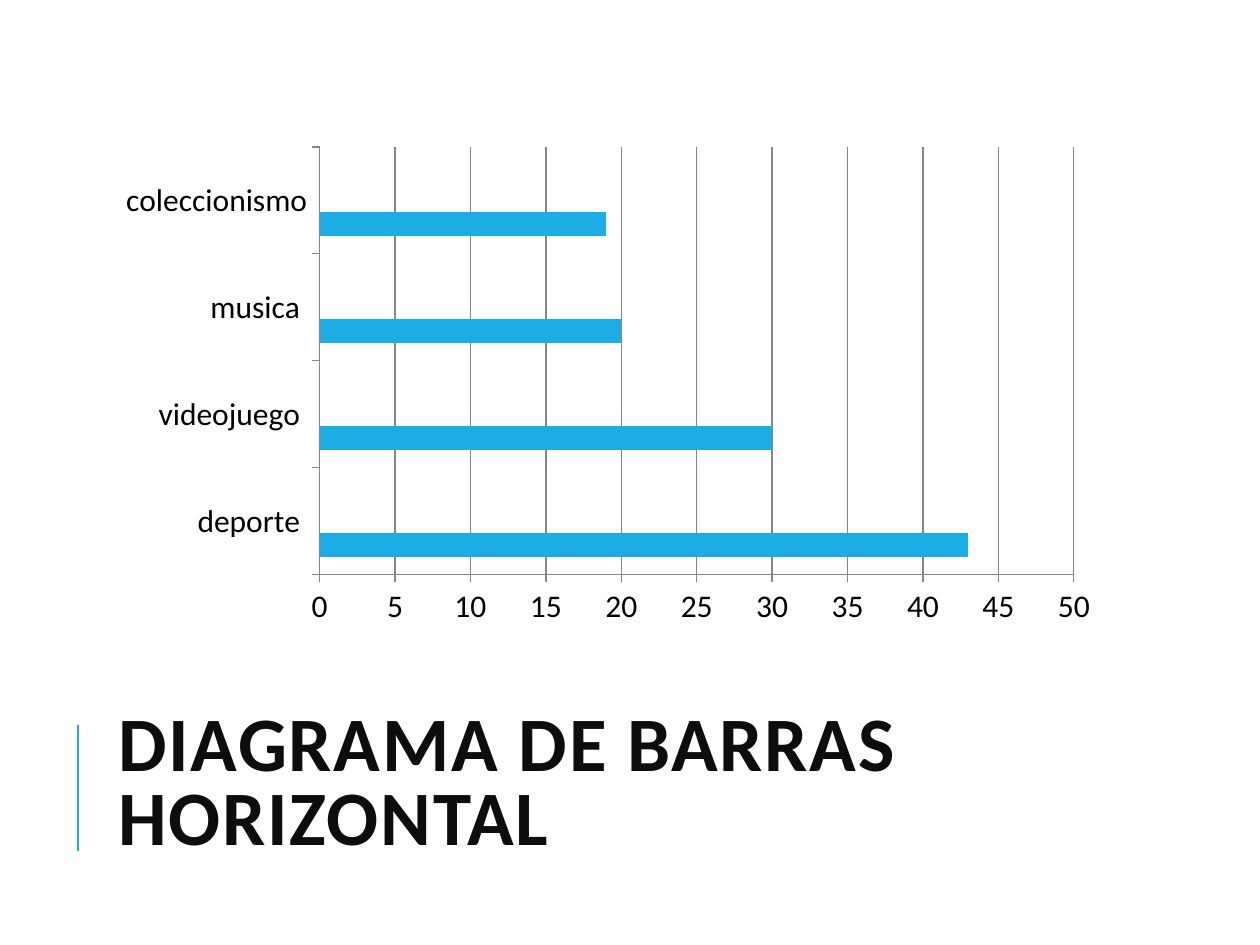
from lxml import etree
from pptx import Presentation
from pptx.chart.data import CategoryChartData
from pptx.dml.color import RGBColor
from pptx.enum.chart import XL_CHART_TYPE as ChartType, XL_TICK_MARK as TickMark
from pptx.enum.shapes import MSO_CONNECTOR as Connector
from pptx.enum.text import MSO_ANCHOR as Anchor
from pptx.oxml.ns import qn
from pptx.util import Pt

FONT = "Calibri"


def px(length):
    """Turn pixels (126 to the inch) into EMU."""
    return round(length * 914400 / 126)


def paint(color_format, color):
    color_format.rgb = RGBColor.from_string(color)


deck = Presentation()
deck.slide_width, deck.slide_height = px(1260), px(945)
page = deck.slides.add_slide(deck.slide_layouts[6])

# Title
box = page.shapes.add_textbox(px(106), px(683), px(1004), px(207))
frame = box.text_frame
frame.word_wrap = True
frame.vertical_anchor = Anchor.MIDDLE
frame.text = "DIAGRAMA DE BARRAS HORIZONTAL"
para = frame.paragraphs[0]
para.line_spacing = 0.8
span = para.runs[0]
span.font.name, span.font.size, span.font.bold = FONT, Pt(44), True
paint(span.font.color, "0D0D0D")
span.font._element.set("spc", "100")

# Accent line beside the title
accent = page.shapes.add_connector(Connector.STRAIGHT, px(78), px(851), px(78), px(725))
paint(accent.line.color, "1CADE4")
accent.line.width = Pt(1.5)
etree.SubElement(accent._element.spPr, qn("a:effectLst"))

# Bar chart: only the first of the three series has values
hobbies = CategoryChartData()
hobbies.categories = ["deporte ", "videojuego ", "musica ", "coleccionismo"]
hobbies.add_series("Series 1", [43, 30, 20, 19])
hobbies.add_series("Series 2", [None] * 4)
hobbies.add_series("Series 3", [None] * 4)
chart = page.shapes.add_chart(
    ChartType.BAR_CLUSTERED, px(106), px(137), px(1004), px(498), hobbies
).chart
chart.has_legend = False
chart.has_title = False
chart.font.name, chart.font.size = FONT, Pt(18)
paint(chart.font.color, "000000")

plot = chart.plots[0]
plot.gap_width = 150
plot.overlap = 0
plot.vary_by_categories = False
for series, color in zip(plot.series, ["1CADE4", "2683C6", "27CED7"]):
    series.format.fill.solid()
    paint(series.format.fill.fore_color, color)

value_axis = chart.value_axis
value_axis.minimum_scale, value_axis.maximum_scale, value_axis.major_unit = 0, 50, 5
value_axis.has_major_gridlines = True
for axis in (chart.category_axis, value_axis):
    axis.major_tick_mark = TickMark.OUTSIDE
    axis.minor_tick_mark = TickMark.NONE
for part in (chart.category_axis, value_axis, value_axis.major_gridlines):
    paint(part.format.line.color, "868686")
    part.format.line.width = Pt(0.75)

deck.save("out.pptx")
